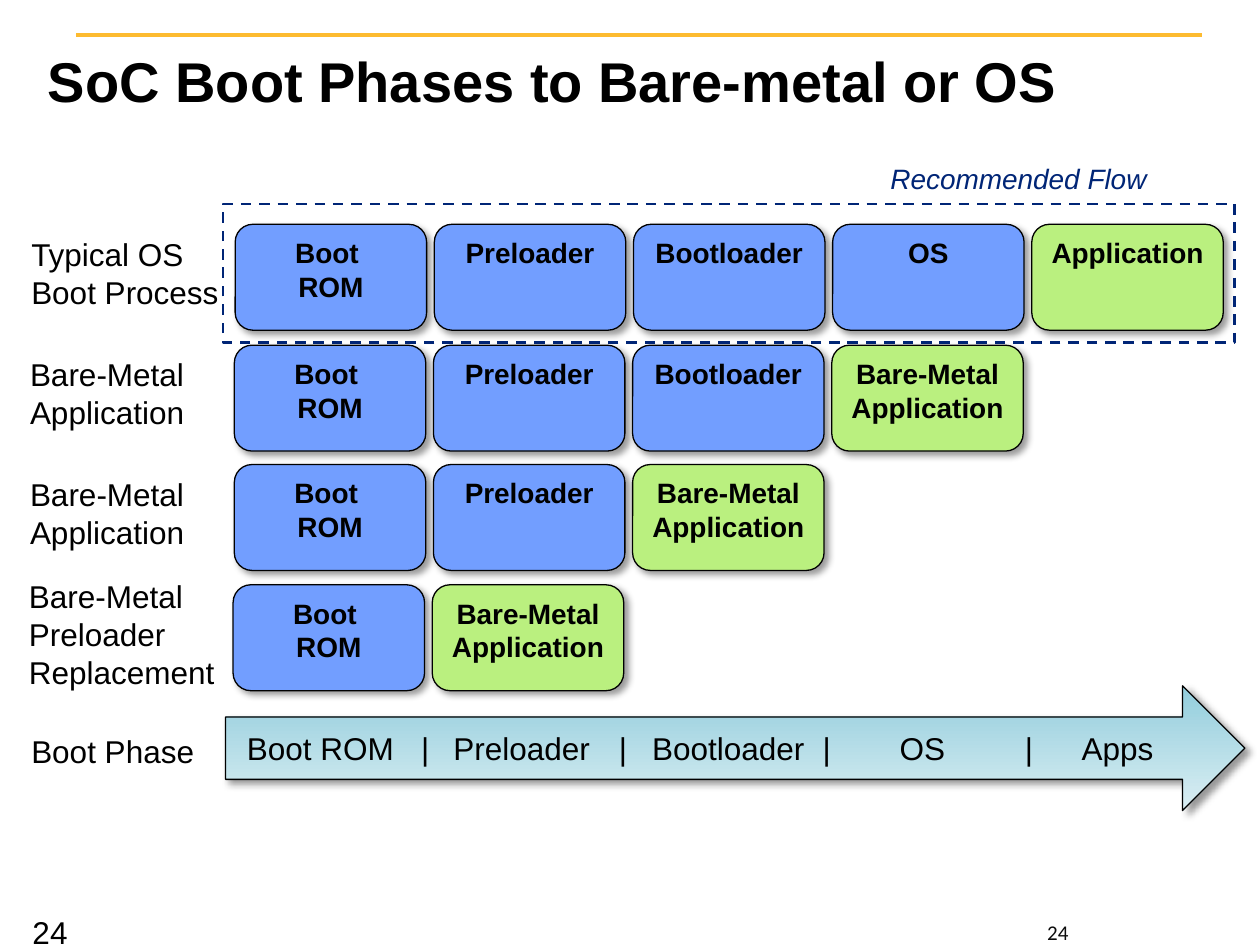
from dataclasses import dataclass

import pptx
import pptx.dml.color
import pptx.enum.dml
import pptx.enum.shapes
import pptx.enum.text
import pptx.oxml
import pptx.oxml.ns
import pptx.util
from lxml import etree

Pt = pptx.util.Pt
SHAPES = pptx.enum.shapes.MSO_SHAPE
ALIGN = pptx.enum.text.PP_ALIGN
ANCHOR = pptx.enum.text.MSO_ANCHOR
AUTO_SIZE = pptx.enum.text.MSO_AUTO_SIZE
DASH = pptx.enum.dml.MSO_LINE

BLACK, NAVY, GOLD = "000000", "002576", "FDBB30"
SYSTEM_BLUE, USER_GREEN = "729EFF", "BAF07F"
PHASE_WIDTH, PHASE_HEIGHT, PHASE_PITCH = 109.4, 60.5, 113.8
LABEL_WIDTH = 144


@dataclass
class Flow:
    label: str
    label_left: float
    label_top: float
    left: float
    top: float
    phases: list[str]  # the last phase is the user's own code


BOOT_ROM = "Boot \nROM"
BARE_METAL = "Bare-Metal Application"
FLOWS = [
    Flow("Typical OS\nBoot Process", 10.8, 131, 134.4, 128.2,
         [BOOT_ROM, "Preloader", "Bootloader", "OS", "Application"]),
    Flow(BARE_METAL, 10.1, 199.4, 133.9, 197.3,
         [BOOT_ROM, "Preloader", "Bootloader", BARE_METAL]),
    Flow(BARE_METAL, 10.1, 267.8, 133.9, 265.5,
         [BOOT_ROM, "Preloader", BARE_METAL]),
    Flow("Bare-Metal Preloader Replacement", 9.4, 326.2, 133.2, 334.2,
         [BOOT_ROM, BARE_METAL]),
]

TIMELINE = "Boot ROM\t|\tPreloader\t|\tBootloader\t|\tOS\t|\tApps"
TIMELINE_STOPS = [99.5, 118, 212.5, 231.5, 329, 373, 444.5, 477]


def rgb(color: str) -> pptx.dml.color.RGBColor:
    return pptx.dml.color.RGBColor.from_string(color)


def add_shadow(properties) -> None:
    effects = pptx.oxml.parse_xml(
        f'<a:effectLst {pptx.oxml.ns.nsdecls("a")}>'
        '<a:outerShdw blurRad="50800" dist="38100" dir="2700000" algn="tl" rotWithShape="0">'
        '<a:srgbClr val="000000"><a:alpha val="40000"/></a:srgbClr>'
        '</a:outerShdw></a:effectLst>')
    fill = properties.find(pptx.oxml.ns.qn("a:solidFill"))
    if properties.tag == pptx.oxml.ns.qn("a:rPr") and fill is not None:
        fill.addnext(effects)
    else:
        properties.append(effects)


def add_tab_stops(paragraph, stops: list[float]) -> None:
    properties = paragraph._p.get_or_add_pPr()
    tabs = etree.SubElement(properties, pptx.oxml.ns.qn("a:tabLst"))
    for stop in stops:
        etree.SubElement(tabs, pptx.oxml.ns.qn("a:tab"), pos=str(int(Pt(stop))), algn="l")


def write_text(frame, text: str, size: float = 18, color: str = BLACK, font: str = "Arial",
               bold: bool = False, italic: bool = False, align=ALIGN.LEFT,
               anchor=ANCHOR.TOP, wrap: bool = True, shadow: bool = False,
               tab_stops: list[float] | None = None) -> None:
    frame.word_wrap = wrap
    frame.vertical_anchor = anchor
    for index, line in enumerate(text.split("\n")):
        paragraph = frame.add_paragraph() if index else frame.paragraphs[0]
        paragraph.alignment = align
        if tab_stops:
            add_tab_stops(paragraph, tab_stops)
        run = paragraph.add_run()
        run.text = line
        run.font.name, run.font.size = font, Pt(size)
        run.font.bold, run.font.italic = bold, italic
        run.font.color.rgb = rgb(color)
        if shadow:
            add_shadow(run._r.get_or_add_rPr())


def add_label(slide, text: str, left: float, top: float, width: float, height: float,
              grow: bool = True, **text_format) -> None:
    label = slide.shapes.add_textbox(Pt(left), Pt(top), Pt(width), Pt(height))
    write_text(label.text_frame, text, **text_format)
    label.text_frame.auto_size = AUTO_SIZE.SHAPE_TO_FIT_TEXT if grow else AUTO_SIZE.NONE


def add_outlined(slide, kind, left: float, top: float, width: float, height: float,
                 line_color: str = BLACK, line_width: float = 0.75):
    shape = slide.shapes.add_shape(kind, Pt(left), Pt(top), Pt(width), Pt(height))
    shape.shadow.inherit = False
    shape.line.color.rgb = rgb(line_color)
    shape.line.width = Pt(line_width)
    return shape


def cast_shadow(shape) -> None:
    properties = shape._element.spPr
    properties.remove(properties.find(pptx.oxml.ns.qn("a:effectLst")))
    add_shadow(properties)


def add_title(slide) -> None:
    title = slide.shapes.title
    title.left, title.top, title.width, title.height = Pt(20.2), Pt(15.1), Pt(682.6), Pt(61.2)
    write_text(title.text_frame, "SoC Boot Phases to Bare-metal or OS", size=32, bold=True,
               anchor=ANCHOR.MIDDLE, shadow=True)
    title.text_frame.auto_size = AUTO_SIZE.NONE


def add_top_rule(slide) -> None:
    rule = slide.shapes.add_connector(pptx.enum.shapes.MSO_CONNECTOR.STRAIGHT,
                                      Pt(43.7), Pt(20), Pt(687), Pt(20))
    rule.line.color.rgb = rgb(GOLD)
    rule.line.width = Pt(2)
    etree.SubElement(rule._element.spPr, pptx.oxml.ns.qn("a:effectLst"))


def add_timeline(slide) -> None:
    arrow = add_outlined(slide, SHAPES.RIGHT_ARROW, 128.9, 391.9, 582.5, 71.3)
    arrow.fill.gradient()
    arrow.fill.gradient_angle = 270
    for stop, color in zip(arrow.fill.gradient_stops, ["92CDDC", "DAEEF3"]):
        stop.color.rgb = rgb(color)
    cast_shadow(arrow)
    arrow.text_frame.margin_left = Pt(12.2)
    write_text(arrow.text_frame, TIMELINE, anchor=ANCHOR.MIDDLE, tab_stops=TIMELINE_STOPS)
    add_label(slide, "Boot Phase", 10.8, 414.9, LABEL_WIDTH, 29)


def add_flow(slide, flow: Flow) -> None:
    add_label(slide, flow.label, flow.label_left, flow.label_top, LABEL_WIDTH, 51)
    for index, phase in enumerate(flow.phases):
        is_last = index == len(flow.phases) - 1
        box = add_outlined(slide, SHAPES.ROUNDED_RECTANGLE, flow.left + index * PHASE_PITCH,
                           flow.top, PHASE_WIDTH, PHASE_HEIGHT)
        box.fill.solid()
        box.fill.fore_color.rgb = rgb(USER_GREEN if is_last else SYSTEM_BLUE)
        cast_shadow(box)
        write_text(box.text_frame, phase, size=16, bold=True, align=ALIGN.CENTER)


def add_recommendation(slide) -> None:
    frame = add_outlined(slide, SHAPES.RECTANGLE, 127.4, 116.6, 578.2, 79.2, NAVY, 1.5)
    frame.fill.background()
    frame.line.dash_style = DASH.DASH
    add_label(slide, "Recommended Flow", 501.8, 88.6, 162.7, 26.6,
              size=16, color=NAVY, italic=True, wrap=False)


def main() -> None:
    deck = pptx.Presentation()
    deck.slide_width, deck.slide_height = Pt(720), Pt(540)
    slide = deck.slides.add_slide(deck.slide_layouts[5])
    add_label(slide, "24", 543.6, 525.6, 121.7, 14.4, grow=False, size=12, color="0D0D0D",
              font="Calibri", align=ALIGN.CENTER, anchor=ANCHOR.MIDDLE)
    add_top_rule(slide)
    add_title(slide)
    add_label(slide, "24", 11.5, 518.4, 54.7, 22.3, grow=False)
    add_timeline(slide)
    for flow in FLOWS:
        add_flow(slide, flow)
    add_recommendation(slide)
    deck.save("out.pptx")


if __name__ == "__main__":
    main()
